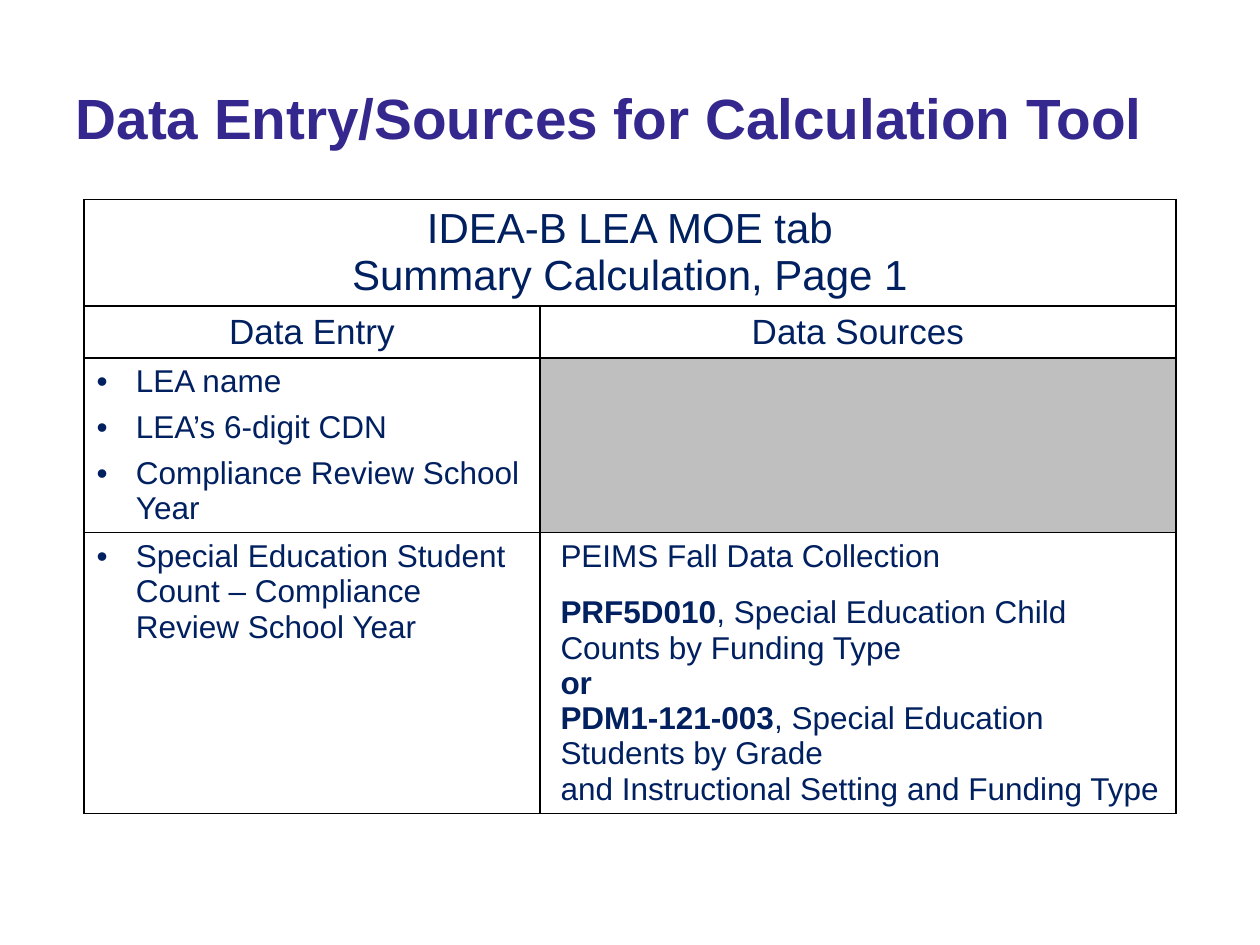
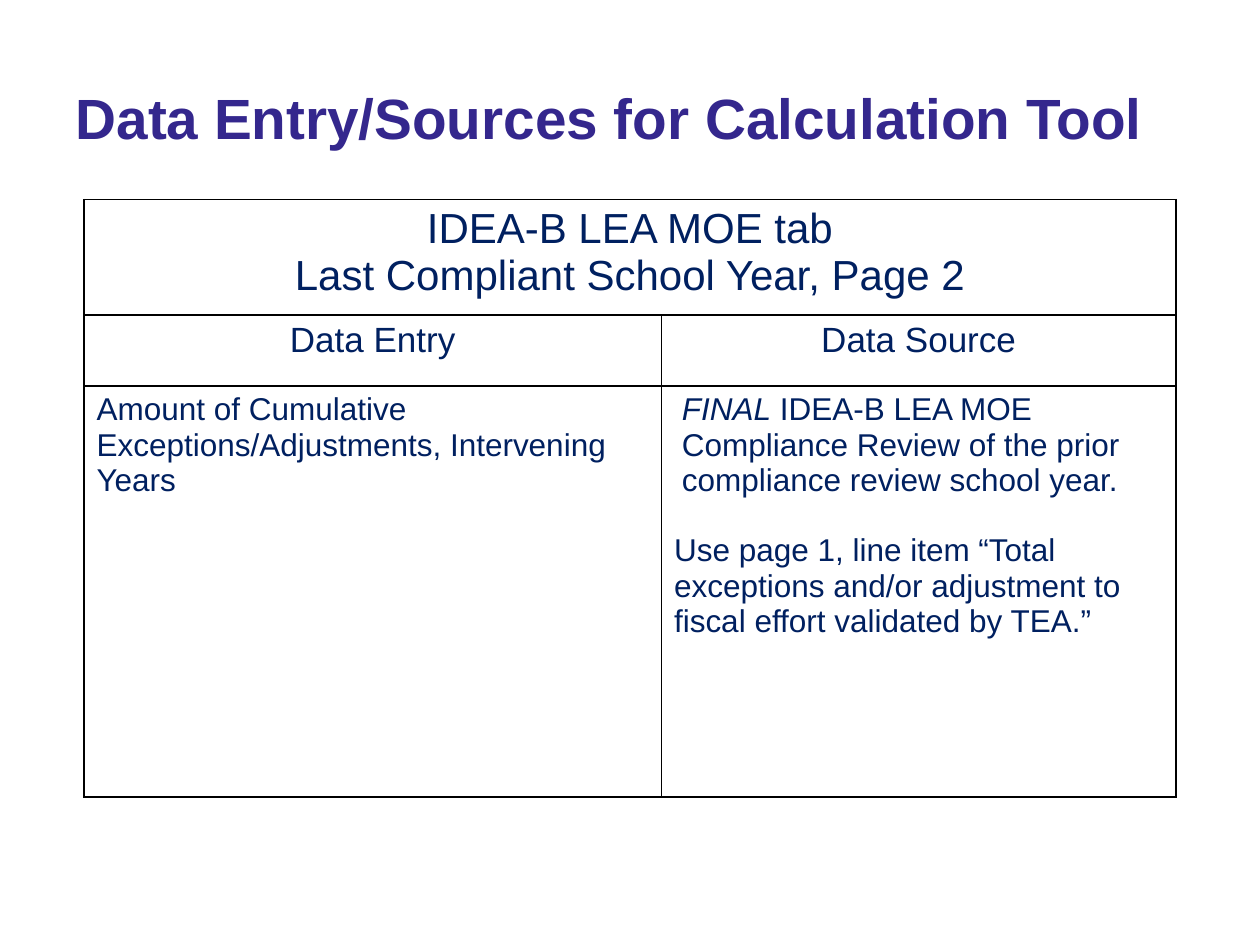
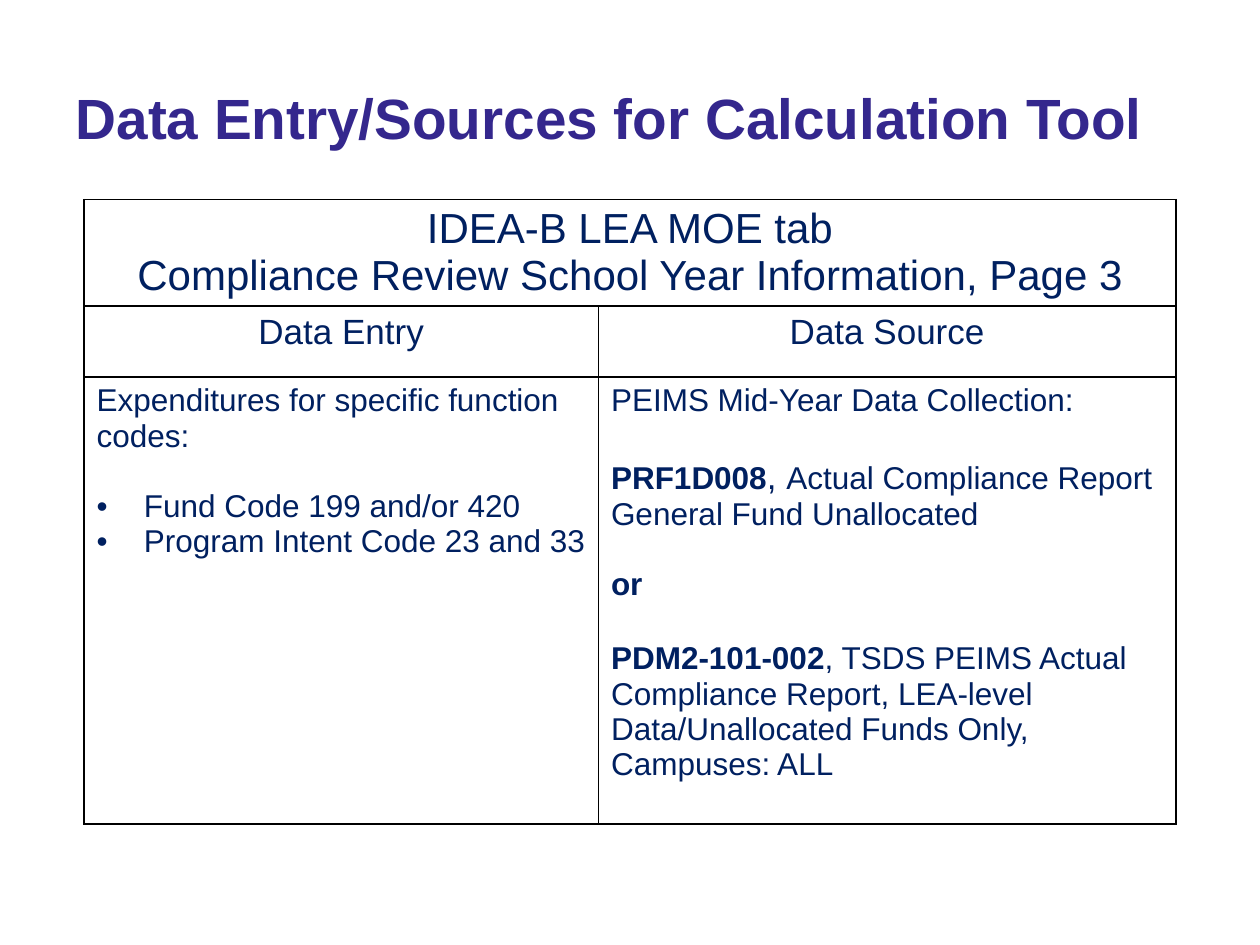
from dataclasses import dataclass

from lxml.etree import SubElement
from pptx import Presentation
from pptx.dml.color import RGBColor
from pptx.enum.text import MSO_ANCHOR as Anchor, MSO_AUTO_SIZE as AutoSize, PP_ALIGN as Align
from pptx.oxml.ns import qn
from pptx.util import Pt


# Shared look
@dataclass(frozen=True)
class Theme:
    font: str = "Arial"
    title: str = "34278D"
    ink: str = "002060"
    paper: str = "FFFFFF"
    blocked: str = "BFBFBF"
    rule: str = "000000"
    title_size: float = 32.4
    tab_size: float = 24
    header_size: float = 20
    body_size: float = 18
    rule_width: float = 1


THEME = Theme()
SLIDE_SIZE = (720, 540)
TITLE_BOX = (36, 21.6, 648, 90)
TABLE_LEFT, TABLE_TOP, TABLE_WIDTH = 48, 114, 624


# Paragraph of runs; a run is (text, style), where style holds "b" or "i"
@dataclass(frozen=True)
class Para:
    runs: tuple
    before: float = 0
    indent: float = 0
    bullet: bool = False
    level: int = 0


def plain(text, **layout):
    return Para(((text, ""),), **layout)


def bullet(text, before=0, indent=22.5):
    return plain(text, before=before, indent=indent, bullet=True)


def source(*runs, before=0):
    return Para(runs, before=before, indent=4.5, level=1)


# Content
TITLE = "Data Entry/Sources for Calculation Tool"
TAB = "IDEA-B LEA MOE tab"
BLOCKED = None

PAGES = [
    {
        "section": "Summary Calculation, Page 1",
        "headers": ("Data Entry", "Data Sources"),
        "entry_width": 260.6,
        "heights": (60.9, 29.4, 100, 160.3),
        "rows": [
            (
                [
                    bullet("LEA name", before=6),
                    bullet("LEA’s 6-digit CDN", before=6),
                    bullet("Compliance Review School Year", before=6),
                ],
                BLOCKED,
            ),
            (
                [bullet("Special Education Student Count – Compliance Review School Year")],
                [
                    source(("PEIMS Fall Data Collection", ""), before=12),
                    source(
                        ("PRF5D010", "b"),
                        (", Special Education Child Counts by Funding Type\n", ""),
                        ("or", "b"),
                        before=12,
                    ),
                    source(
                        ("PDM1-121-003", "b"),
                        (", Special Education Students by Grade\n"
                         "and Instructional Setting and Funding Type", ""),
                    ),
                ],
            ),
        ],
    },
    {
        "section": "Last Compliant School Year, Page 2",
        "headers": ("Data Entry", "Data Source"),
        "entry_width": 330,
        "heights": (66, 40.6, 234.9),
        "rows": [
            (
                [plain("Amount of Cumulative Exceptions/Adjustments, Intervening Years")],
                [
                    source(
                        ("FINAL", "i"),
                        (" IDEA-B LEA MOE Compliance Review of the prior "
                         "compliance review school year.", ""),
                        before=12,
                    ),
                    plain("Use page 1, line item “Total exceptions and/or adjustment to",
                          before=20),
                    plain("fiscal effort validated by TEA.”"),
                ],
            ),
        ],
    },
    {
        "section": "Compliance Review School Year Information, Page 3",
        "headers": ("Data Entry", "Data Source"),
        "entry_width": 294,
        "heights": (60.9, 40.6, 255.4),
        "rows": [
            (
                [
                    plain("Expenditures for specific function codes:"),
                    bullet("Fund Code 199 and/or 420", before=20, indent=27),
                    bullet("Program Intent Code 23 and 33", indent=27),
                ],
                [
                    plain("PEIMS Mid-Year Data Collection:"),
                    Para(
                        (
                            ("PRF1D008", "b"),
                            (", ", "large"),
                            ("Actual Compliance Report General Fund Unallocated", ""),
                        ),
                        before=22.3,
                    ),
                    Para((("or", "b"),), before=20),
                    Para(
                        (
                            ("PDM2-101-002", "b"),
                            (", TSDS PEIMS Actual Compliance Report, LEA-level "
                             "Data/Unallocated Funds Only, Campuses: ALL", ""),
                        ),
                        before=22.3,
                    ),
                ],
            ),
        ],
    },
]


# Text
def add_run(paragraph, text, size, color, bold=False, italic=False):
    run = paragraph.add_run()
    run.text = text
    font = run.font
    font.name, font.size, font.bold, font.italic = THEME.font, Pt(size), bold, italic
    font.color.rgb = RGBColor.from_string(color)


def format_paragraph(paragraph, para, align):
    paragraph.alignment = align
    paragraph.level = para.level
    paragraph.space_before = Pt(para.before)
    props = paragraph._p.get_or_add_pPr()
    props.set("marL", str(Pt(para.indent)))
    props.set("indent", str(-Pt(para.indent) if para.bullet else 0))
    if para.bullet:
        SubElement(props, qn("a:buFont"), typeface=THEME.font)
        SubElement(props, qn("a:buChar"), char="•")


def write_cell(cell, paras, size, align=Align.LEFT):
    for index, para in enumerate(paras):
        frame = cell.text_frame
        paragraph = frame.add_paragraph() if index else frame.paragraphs[0]
        format_paragraph(paragraph, para, align)
        for text, style in para.runs:
            run_size = THEME.header_size if style == "large" else size
            for part, line in enumerate(text.split("\n")):
                if part:
                    paragraph.add_line_break()
                if line:
                    add_run(paragraph, line, run_size, THEME.ink, style == "b", style == "i")


# Table
def style_cell(cell, fill):
    props = cell._tc.get_or_add_tcPr()
    for side in ("lnL", "lnR", "lnT", "lnB"):
        line = SubElement(props, qn(f"a:{side}"), w=str(Pt(THEME.rule_width)))
        SubElement(SubElement(line, qn("a:solidFill")), qn("a:srgbClr"), val=THEME.rule)
    cell.fill.solid()
    cell.fill.fore_color.rgb = RGBColor.from_string(fill)


def add_page_table(slide, page):
    heights = page["heights"]
    table = slide.shapes.add_table(
        len(heights), 2, Pt(TABLE_LEFT), Pt(TABLE_TOP), Pt(TABLE_WIDTH), Pt(sum(heights))
    ).table
    table.first_row = table.horz_banding = False
    widths = (page["entry_width"], TABLE_WIDTH - page["entry_width"])
    for column, width in zip(table.columns, widths):
        column.width = Pt(width)
    for row, height in zip(table.rows, heights):
        row.height = Pt(height)
    for cell in table.iter_cells():
        style_cell(cell, THEME.paper)

    # Tab name across both columns, then the two headers
    table.cell(0, 0).merge(table.cell(0, 1))
    write_cell(table.cell(0, 0), [plain(TAB), plain(page["section"])],
               THEME.tab_size, Align.CENTER)
    for col, header in enumerate(page["headers"]):
        write_cell(table.cell(1, col), [plain(header)], THEME.header_size, Align.CENTER)

    # Entries and their sources
    for row, contents in enumerate(page["rows"], start=2):
        for col, paras in enumerate(contents):
            cell = table.cell(row, col)
            if paras is BLOCKED:
                cell.fill.fore_color.rgb = RGBColor.from_string(THEME.blocked)
            else:
                write_cell(cell, paras, THEME.body_size)


def add_title(slide):
    title = slide.shapes.title
    title.left, title.top, title.width, title.height = map(Pt, TITLE_BOX)
    frame = title.text_frame
    frame.auto_size = AutoSize.NONE
    frame.vertical_anchor = Anchor.MIDDLE
    heading = frame.paragraphs[0]
    heading.alignment = Align.LEFT
    add_run(heading, TITLE, THEME.title_size, THEME.title, bold=True)


def main():
    deck = Presentation()
    deck.slide_width, deck.slide_height = map(Pt, SLIDE_SIZE)
    title_only = deck.slide_layouts[5]
    for page in PAGES:
        slide = deck.slides.add_slide(title_only)
        add_title(slide)
        add_page_table(slide, page)
    deck.save("out.pptx")


if __name__ == "__main__":
    main()
